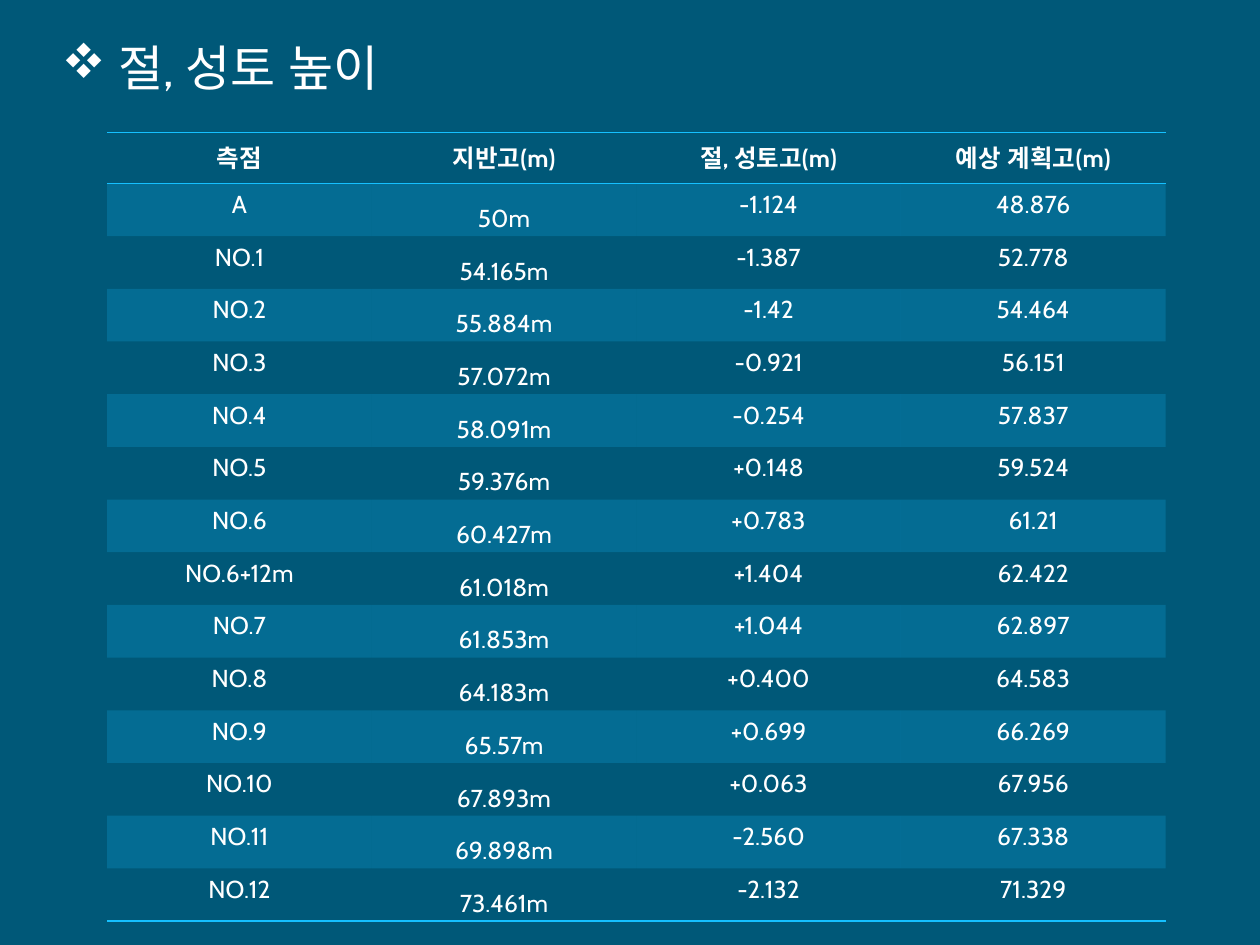
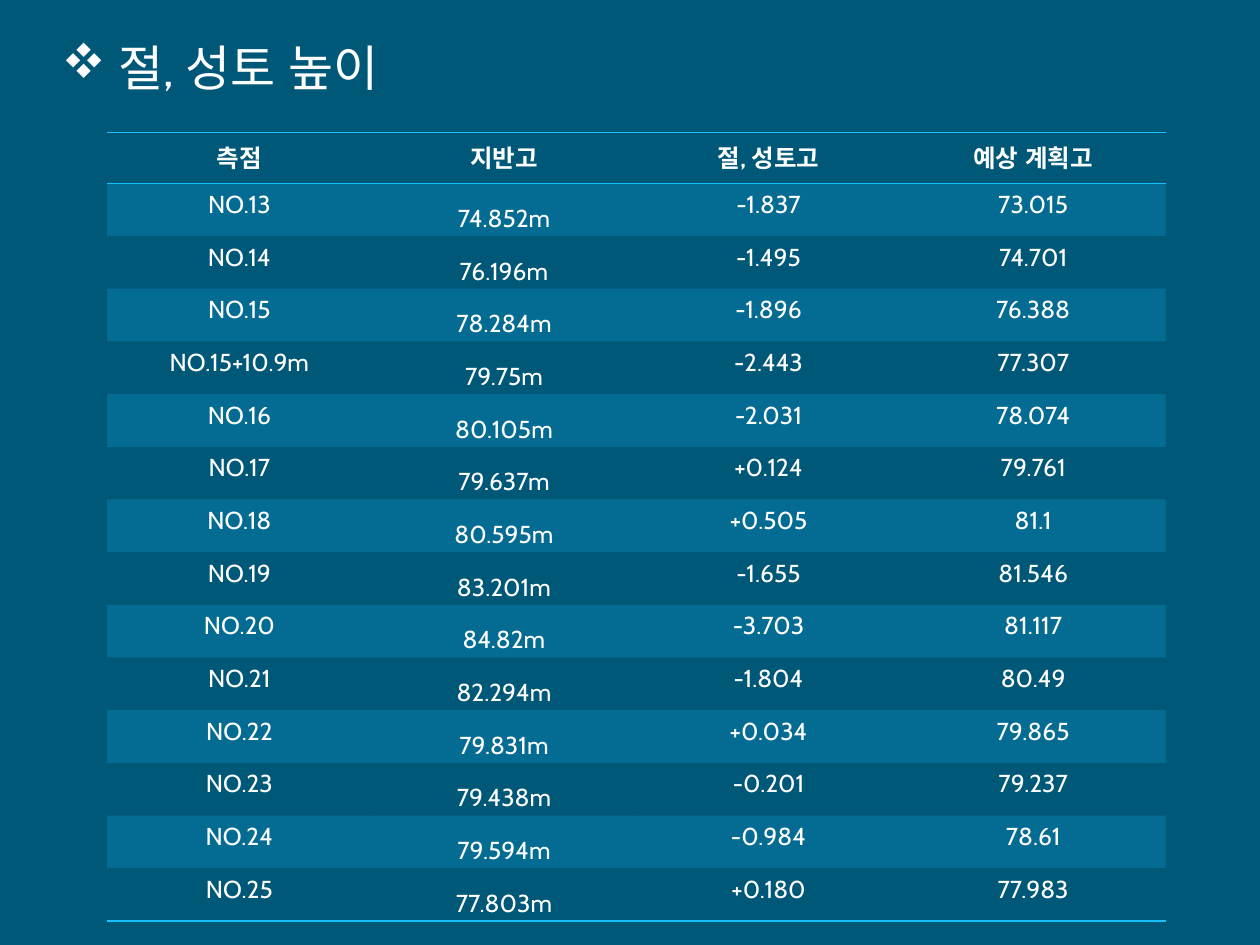
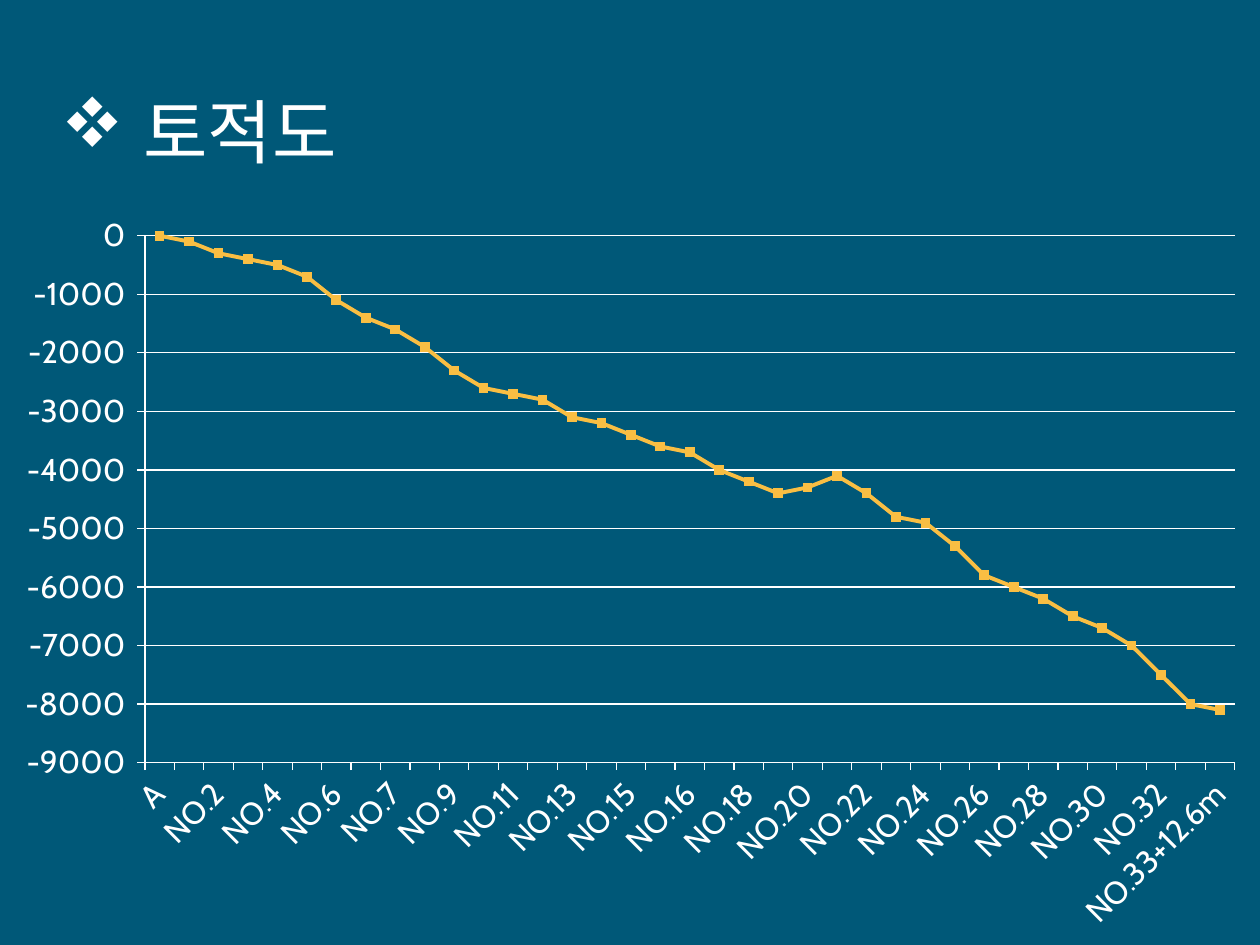
from pptx import Presentation
from pptx.chart.data import CategoryChartData
from pptx.dml.color import RGBColor
from pptx.enum.chart import XL_AXIS_CROSSES, XL_CHART_TYPE, XL_MARKER_STYLE, XL_TICK_MARK
from pptx.enum.lang import MSO_LANGUAGE_ID
from pptx.enum.shapes import MSO_SHAPE
from pptx.enum.text import MSO_ANCHOR, MSO_AUTO_SIZE, PP_ALIGN
from pptx.oxml import parse_xml
from pptx.oxml.ns import nsdecls, qn
from pptx.oxml.xmlchemy import OxmlElement
from pptx.util import Inches, Pt

FONT = "Cabin"
COLORS = {"bg": "005878", "text": "FFFFFF", "accent": "15C0FF", "line": "F9BE43"}
NO_STYLE = "{2D5ABB26-0587-4C30-8999-92F81FD0307C}"

HEIGHTS_TO_12 = [
    ("측점", "지반고(m)", "절, 성토고(m)", "예상 계획고(m)"),
    ("A", "50m", "-1.124", "48.876"),
    ("NO.1", "54.165m", "-1.387", "52.778"),
    ("NO.2", "55.884m", "-1.42", "54.464"),
    ("NO.3", "57.072m", "-0.921", "56.151"),
    ("NO.4", "58.091m", "-0.254", "57.837"),
    ("NO.5", "59.376m", "+0.148", "59.524"),
    ("NO.6", "60.427m", "+0.783", "61.21"),
    ("NO.6+12m", "61.018m", "+1.404", "62.422"),
    ("NO.7", "61.853m", "+1.044", "62.897"),
    ("NO.8", "64.183m", "+0.400", "64.583"),
    ("NO.9", "65.57m", "+0.699", "66.269"),
    ("NO.10", "67.893m", "+0.063", "67.956"),
    ("NO.11", "69.898m", "-2.560", "67.338"),
    ("NO.12", "73.461m", "-2.132", "71.329"),
]
HEIGHTS_TO_25 = [
    ("측점", "지반고", "절, 성토고", "예상 계획고"),
    ("NO.13", "74.852m", "-1.837", "73.015"),
    ("NO.14", "76.196m", "-1.495", "74.701"),
    ("NO.15", "78.284m", "-1.896", "76.388"),
    ("NO.15+10.9m", "79.75m", "-2.443", "77.307"),
    ("NO.16", "80.105m", "-2.031", "78.074"),
    ("NO.17", "79.637m", "+0.124", "79.761"),
    ("NO.18", "80.595m", "+0.505", "81.1"),
    ("NO.19", "83.201m", "-1.655", "81.546"),
    ("NO.20", "84.82m", "-3.703", "81.117"),
    ("NO.21", "82.294m", "-1.804", "80.49"),
    ("NO.22", "79.831m", "+0.034", "79.865"),
    ("NO.23", "79.438m", "-0.201", "79.237"),
    ("NO.24", "79.594m", "-0.984", "78.61"),
    ("NO.25", "77.803m", "+0.180", "77.983"),
]
EXTRA_STATIONS = {6: "NO.6+12m", 15: "NO.15+10.9m", 33: "NO.33+12.6m"}
MASS_CURVE = [
    0, -100, -300, -400, -500, -700, -1100, -1400, -1600, -1900, -2300, -2600, -2700,
    -2800, -3100, -3200, -3400, -3600, -3700, -4000, -4200, -4400, -4300, -4100, -4400,
    -4800, -4900, -5300, -5800, -6000, -6200, -6500, -6700, -7000, -7500, -8000, -8100,
]


def rgb(name):
    return RGBColor.from_string(COLORS[name])


def fill_solid(fill, color, opacity=100):
    fill.solid()
    fill.fore_color.rgb = rgb(color)
    if opacity < 100:
        alpha = OxmlElement("a:alpha")
        alpha.set("val", str(opacity * 1000))
        fill._xPr.find(f"{qn('a:solidFill')}/{qn('a:srgbClr')}").append(alpha)


def style_font(font, size, bold=False):
    font.name, font.size, font.bold = FONT, Pt(size), bold
    font.color.rgb = rgb("text")


def style_line(line, color, width):
    line.color.rgb = rgb(color)
    line.width = Pt(width)


def add_run(p, text, size, bold=False):
    r = p.add_run()
    r.text = text
    style_font(r.font, size, bold)
    r.font.language_id = MSO_LANGUAGE_ID.KOREAN


def add_title(slide, text, size, height, indent, anchor):
    sp = slide.shapes.title
    sp.left, sp.top, sp.width, sp.height = map(Inches, (0.39, 0.25, 8.4, height))
    tf = sp.text_frame
    tf.word_wrap, tf.auto_size, tf.vertical_anchor = True, MSO_AUTO_SIZE.NONE, anchor
    p = tf.paragraphs[0]
    p.alignment, p.space_before = PP_ALIGN.LEFT, Pt(4)
    add_run(p, text, size)
    pPr = p._p.get_or_add_pPr()
    pPr.set("marL", str(Inches(indent)))
    pPr.set("indent", str(-Inches(indent)))
    # In Wingdings the letter v is the four-diamond bullet.
    pPr.append(parse_xml(
        f'<a:buFont {nsdecls("a")} typeface="Wingdings" pitchFamily="2" charset="2"/>'))
    pPr.append(parse_xml(f'<a:buChar {nsdecls("a")} char="v"/>'))


def add_border(cell, side):
    cell._tc.get_or_add_tcPr().append(parse_xml(
        f'<a:{side} {nsdecls("a")} w="{Pt(1)}"><a:solidFill>'
        f'<a:srgbClr val="{COLORS["accent"]}"/></a:solidFill></a:{side}>'))


def add_height_table(slide, rows, left, top, width, height):
    table = slide.shapes.add_table(
        len(rows), len(rows[0]), *map(Inches, (left, top, width, height))).table
    table.first_row = table.horz_banding = False
    table._tbl.tblPr.find(qn("a:tableStyleId")).text = NO_STYLE
    for i, row in enumerate(rows):
        for j, text in enumerate(row):
            cell = table.cell(i, j)
            p = cell.text_frame.paragraphs[0]
            p.alignment = PP_ALIGN.CENTER
            add_run(p, text, 14, bold=i == 0)
            if i and j == 1:
                p.line_spacing = 1.6
                cell.vertical_anchor = MSO_ANCHOR.MIDDLE
                cell.margin_left = cell.margin_right = Inches(0.07)
                cell.margin_top = cell.margin_bottom = Inches(0.02)
            if i == 0:
                add_border(cell, "lnT")
            if i in (0, len(rows) - 1):
                add_border(cell, "lnB")
            if i % 2:
                fill_solid(cell.fill, "accent", 20)
            else:
                cell.fill.background()


def station_names():
    names = ["A"]
    for n in range(1, 34):
        names.append(f"NO.{n}")
        if n in EXTRA_STATIONS:
            names.append(EXTRA_STATIONS[n])
    return names


def set_plot_area(chart, x, y, w, h):
    """Fix the inner plot area, in fractions of the chart."""
    parts = "".join(f'<c:{tag} val="{val}"/>' for tag, val in (
        ("layoutTarget", "inner"), ("xMode", "edge"), ("yMode", "edge"),
        ("x", x), ("y", y), ("w", w), ("h", h)))
    area = chart._chartSpace.chart.plotArea
    for old in area.findall(qn("c:layout")):
        area.remove(old)
    area.insert(0, parse_xml(
        f'<c:layout {nsdecls("c")}><c:manualLayout>{parts}</c:manualLayout></c:layout>'))


def add_mass_chart(slide, left, top, width, height):
    data = CategoryChartData(number_format="0_ ")
    data.categories = station_names()
    data.add_series("Series 1", MASS_CURVE)
    chart = slide.shapes.add_chart(
        XL_CHART_TYPE.LINE_MARKERS_STACKED,
        *map(Inches, (left, top, width, height)), data).chart
    chart.has_title = chart.has_legend = False
    style_font(chart.font, 18)
    set_plot_area(chart, 0.115, 0.046, 0.865, 0.709)

    cat, val = chart.category_axis, chart.value_axis
    for axis in (cat, val):
        axis.major_tick_mark, axis.minor_tick_mark = XL_TICK_MARK.OUTSIDE, XL_TICK_MARK.NONE
        style_line(axis.format.line, "text", 0.7)
        style_font(axis.tick_labels.font, 18)
    cat._element.txPr.find(qn("a:bodyPr")).set("rot", str(-45 * 60000))
    val.minimum_scale, val.maximum_scale, val.major_unit = -9000, 0, 1000
    val.crosses = XL_AXIS_CROSSES.MINIMUM
    val.tick_labels.number_format = "0_ "
    val.tick_labels.number_format_is_linked = False
    val.has_major_gridlines = True
    style_line(val.major_gridlines.format.line, "text", 0.7)

    plot = chart.plots[0]
    plot.vary_by_categories = False
    curve = plot.series[0]
    curve.smooth = False
    style_line(curve.format.line, "line", 2.25)
    curve.marker.style, curve.marker.size = XL_MARKER_STYLE.SQUARE, 5
    fill_solid(curve.marker.format.fill, "line")
    curve.marker.format.line.color.rgb = rgb("line")


def add_slide(prs):
    return prs.slides.add_slide(prs.slide_layouts.get_by_name("Title Only"))


def height_slide(prs, rows, table_height):
    slide = add_slide(prs)
    add_title(slide, "절, 성토 높이", 28, 0.67, 0.45, MSO_ANCHOR.TOP)
    add_height_table(slide, rows, 0.85, 1.05, 8.4, table_height)
    return slide


def mass_curve_slide(prs):
    slide = add_slide(prs)
    add_title(slide, "토적도", 40, 1.17, 0.65, MSO_ANCHOR.BOTTOM)
    add_mass_chart(slide, 0, 1.6, 10, 5.9)


def style_master(prs, slide):
    """Set the shared background and its veil, which is drawn on slide and moved to the master."""
    master = prs.slide_master
    fill_solid(master.background.fill, "bg")
    veil = slide.shapes.add_shape(MSO_SHAPE.RECTANGLE, 0, 0, prs.slide_width, prs.slide_height)
    veil.shadow.inherit = False
    veil.line.fill.background()
    fill_solid(veil.fill, "bg", 50)
    master.shapes._spTree.insert(2, veil._element)


def main():
    prs = Presentation()
    prs.slide_width, prs.slide_height = Inches(10), Inches(7.5)
    first = height_slide(prs, HEIGHTS_TO_12, 6.09)
    style_master(prs, first)
    height_slide(prs, HEIGHTS_TO_25, 6.08)
    mass_curve_slide(prs)
    prs.save("out.pptx")


if __name__ == "__main__":
    main()
